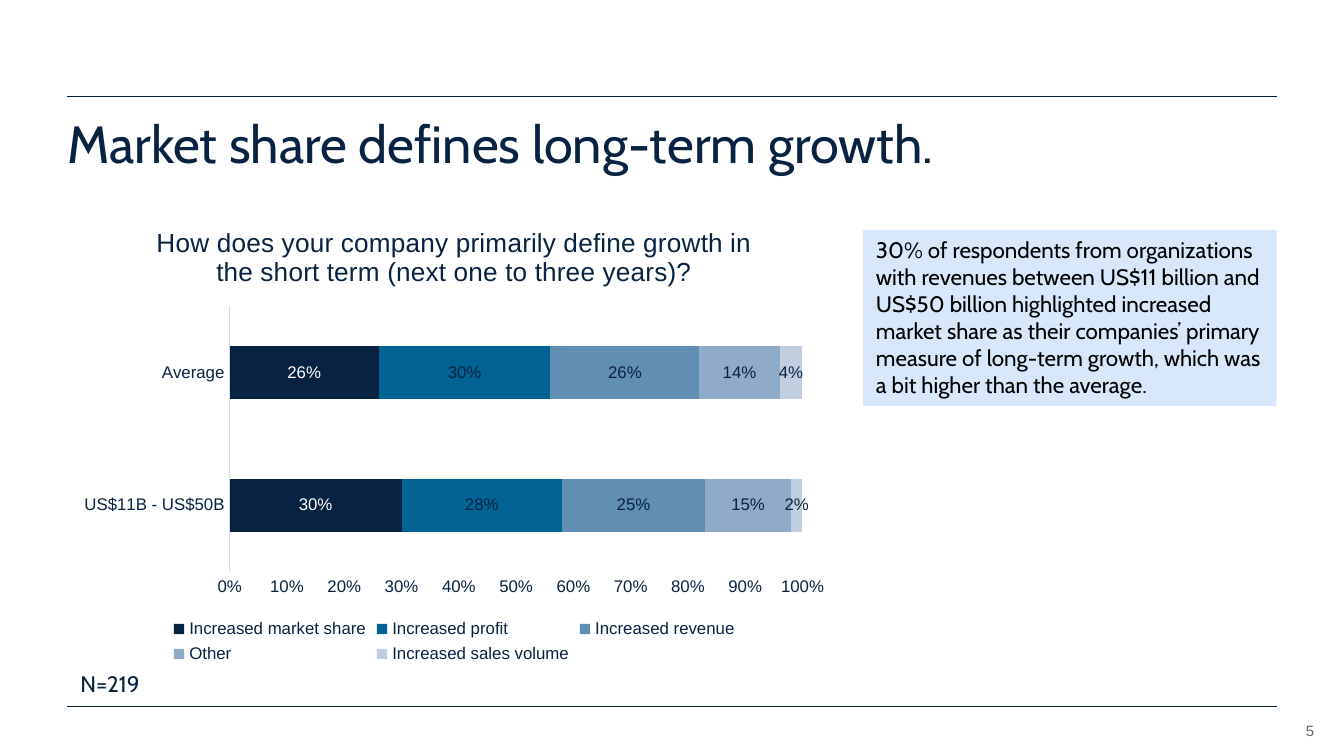
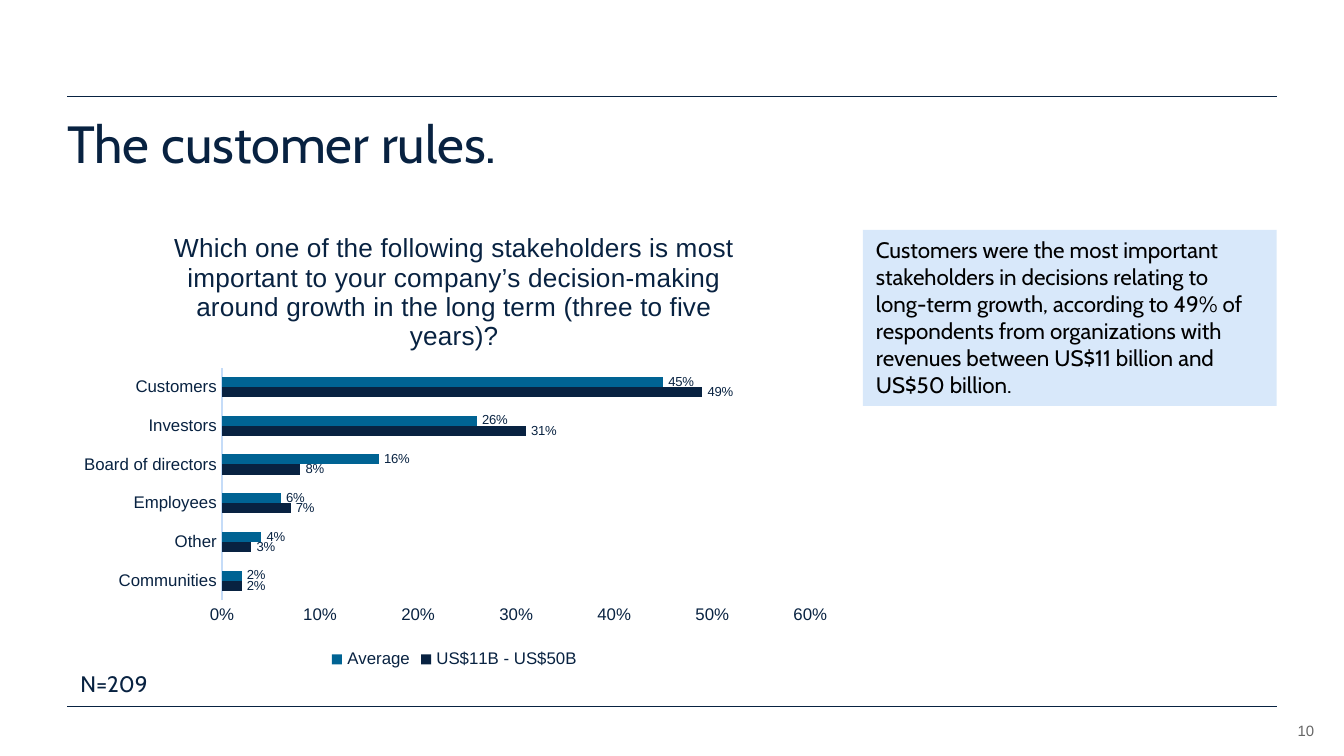
import pptx
import pptx.chart.data
import pptx.dml.color
import pptx.enum.chart
import pptx.enum.shapes
import pptx.enum.text
import pptx.oxml
import pptx.oxml.ns
import pptx.util

Pt = pptx.util.Pt
RGB = pptx.dml.color.RGBColor
ChartType = pptx.enum.chart.XL_CHART_TYPE
LabelPosition = pptx.enum.chart.XL_LABEL_POSITION
TextAlign = pptx.enum.text.PP_ALIGN
Anchor = pptx.enum.text.MSO_ANCHOR

NAVY = RGB(0x08, 0x22, 0x41)
BLUE = RGB(0x00, 0x63, 0x93)
STEEL = RGB(0x61, 0x8E, 0xB3)
MIST = RGB(0x8F, 0xAB, 0xC8)
HAZE = RGB(0xC1, 0xCE, 0xDF)
AXIS_BLUE = RGB(0xC5, 0xDC, 0xF8)
PALE_BLUE = RGB(0xD8, 0xE8, 0xFA)
GRAY = RGB(0x66, 0x66, 0x66)
BLACK = RGB(0, 0, 0)
WHITE = RGB(255, 255, 255)

HEADING_FONT = "Cabin"
CHART_FONT = "Arial"
LEFT, CONTENT_WIDTH = 36, 648
RULE_TOPS = (51.8, 378.7)

SLIDES = [
    {
        "title": "Market share defines long-term growth.",
        "callout": "30% of respondents from organizations with revenues between "
                   "US$11 billion and US$50 billion highlighted increased market "
                   "share as their companies’ primary measure of long-term growth, "
                   "which was a bit higher than the average.",
        "sample": "N=219",
        "number": "5",
        "question": "How does your company primarily define growth in the short "
                    "term (next one to three years)?",
        "type": ChartType.BAR_STACKED_100,
        "top": 109.4,
        "plot": {"x": 0.21, "y": 0.22, "w": 0.74, "h": 0.57},
        "axis_max": 1,
        "gap": 150,
        "overlap": 100,
        "label_size": 9,
        "label_position": LabelPosition.CENTER,
        "categories": ["US$11B - US$50B", "Average"],
        "series": [
            ("Increased market share", (0.30, 0.26), NAVY, WHITE),
            ("Increased profit", (0.28, 0.30), BLUE, NAVY),
            ("Increased revenue", (0.25, 0.26), STEEL, NAVY),
            ("Other", (0.15, 0.14), MIST, NAVY),
            ("Increased sales volume", (0.02, 0.04), HAZE, NAVY),
        ],
    },
    {
        "title": "The customer rules.",
        "callout": "Customers were the most important stakeholders in decisions "
                   "relating to long-term growth, according to 49% of respondents "
                   "from organizations with revenues between US$11 billion and "
                   "US$50 billion.",
        "sample": "N=209",
        "number": "10",
        "question": "Which one of the following stakeholders is most important to "
                    "your company’s decision-making around growth in the long term "
                    "(three to five years)?",
        "type": ChartType.BAR_CLUSTERED,
        "top": 112.3,
        "plot": {"x": 0.2, "y": 0.34, "w": 0.76, "h": 0.5},
        "axis_max": 0.6,
        "gap": 182,
        "overlap": 0,
        "label_size": 7,
        "label_position": LabelPosition.OUTSIDE_END,
        "categories": ["Communities", "Other", "Employees",
                       "Board of directors", "Investors", "Customers"],
        "series": [
            ("US$11B - US$50B", (0.02, 0.03, 0.07, 0.08, 0.31, 0.49), NAVY, NAVY),
            ("Average", (0.02, 0.04, 0.06, 0.16, 0.26, 0.45), BLUE, NAVY),
        ],
    },
]


def style_font(font, size, color=NAVY, name=CHART_FONT):
    font.size = Pt(size)
    font.name = name
    font.color.rgb = color
    font.bold = False


def write(shape, text, size, color=NAVY, name=HEADING_FONT, inset=True,
          align=TextAlign.LEFT, anchor=Anchor.TOP, spacing=None):
    frame = shape.text_frame
    frame.word_wrap = True
    frame.vertical_anchor = anchor
    if inset:
        frame.auto_size = pptx.enum.text.MSO_AUTO_SIZE.SHAPE_TO_FIT_TEXT
    else:
        frame.margin_left = frame.margin_right = 0
        frame.margin_top = frame.margin_bottom = 0
    paragraph = frame.paragraphs[0]
    paragraph.text = text
    paragraph.alignment = align
    paragraph.line_spacing = spacing
    style_font(paragraph.font, size, color, name)


def text_box(slide, box, *args, **style):
    write(slide.shapes.add_textbox(*map(Pt, box)), *args, **style)


def add_rule(slide, top):
    rule = slide.shapes.add_connector(
        pptx.enum.shapes.MSO_CONNECTOR.STRAIGHT,
        Pt(LEFT), Pt(top), Pt(LEFT + CONTENT_WIDTH), Pt(top))
    rule.line.color.rgb = NAVY
    rule.line.width = Pt(0.5)
    rule.element.spPr.append(pptx.oxml.parse_xml(
        f"<a:effectLst {pptx.oxml.ns.nsdecls('a')}/>"))


def add_callout(slide, text):
    callout = slide.shapes.add_shape(
        pptx.enum.shapes.MSO_SHAPE.RECTANGLE,
        Pt(462.2), Pt(123.2), Pt(221.8), Pt(94.3))
    callout.shadow.inherit = False
    callout.fill.solid()
    callout.fill.fore_color.rgb = PALE_BLUE
    callout.line.fill.background()
    write(callout, text, 12, BLACK)


def place_plot(chart, plot):
    area = chart.element.find(".//" + pptx.oxml.ns.qn("c:plotArea"))
    for layout in area.findall(pptx.oxml.ns.qn("c:layout")):
        area.remove(layout)
    sizes = "".join(f'<c:{side} val="{share}"/>' for side, share in plot.items())
    area.insert(0, pptx.oxml.parse_xml(
        f"<c:layout {pptx.oxml.ns.nsdecls('c')}><c:manualLayout>"
        '<c:layoutTarget val="inner"/><c:xMode val="edge"/><c:yMode val="edge"/>'
        f"{sizes}</c:manualLayout></c:layout>"))


def style_axes(chart, axis_max):
    for axis in (chart.category_axis, chart.value_axis):
        axis.has_major_gridlines = False
        axis.major_tick_mark = pptx.enum.chart.XL_TICK_MARK.NONE
        axis.minor_tick_mark = pptx.enum.chart.XL_TICK_MARK.NONE
        style_font(axis.tick_labels.font, 9)
    chart.category_axis.format.line.color.rgb = AXIS_BLUE
    chart.category_axis.format.line.width = Pt(0.75)
    values = chart.value_axis
    values.format.line.fill.background()
    values.minimum_scale = 0
    values.maximum_scale = axis_max
    values.major_unit = 0.1
    values.tick_labels.number_format = "0%"
    values.tick_labels.number_format_is_linked = False


def add_survey_chart(slide, content):
    answers = pptx.chart.data.CategoryChartData(number_format="0%")
    answers.categories = content["categories"]
    for name, shares, *_ in content["series"]:
        answers.add_series(name, shares)
    chart = slide.shapes.add_chart(
        content["type"], Pt(LEFT), Pt(content["top"]), Pt(414.7), Pt(249.1),
        answers).chart
    style_font(chart.font, 10)

    chart.has_title = True
    question = chart.chart_title.text_frame.paragraphs[0]
    question.text = content["question"]
    style_font(question.font, 14)

    chart.has_legend = True
    chart.legend.position = pptx.enum.chart.XL_LEGEND_POSITION.BOTTOM
    chart.legend.include_in_layout = False
    style_font(chart.legend.font, 9)

    style_axes(chart, content["axis_max"])
    place_plot(chart, content["plot"])

    bars = chart.plots[0]
    bars.vary_by_categories = False
    bars.gap_width = content["gap"]
    bars.overlap = content["overlap"]
    for series, (_, _, fill, label_color) in zip(bars.series, content["series"]):
        series.format.fill.solid()
        series.format.fill.fore_color.rgb = fill
        labels = series.data_labels
        labels.show_value = True
        labels.position = content["label_position"]
        labels.number_format = "0%"
        labels.number_format_is_linked = False
        style_font(labels.font, content["label_size"], label_color)


def build_slide(deck, content):
    slide = deck.slides.add_slide(deck.slide_layouts[6])
    for top in RULE_TOPS:
        add_rule(slide, top)
    text_box(slide, (670.3, 383, 33.8, 13), content["number"], 8, GRAY, CHART_FONT,
             inset=False, align=TextAlign.RIGHT, anchor=Anchor.BOTTOM)
    text_box(slide, (LEFT, 63.4, CONTENT_WIDTH, 39.6), content["title"], 28,
             inset=False, spacing=0.9)
    add_callout(slide, content["callout"])
    text_box(slide, (LEFT, 355.7, 120, 21.8), content["sample"], 12)
    add_survey_chart(slide, content)


def main():
    deck = pptx.Presentation()
    deck.slide_width, deck.slide_height = Pt(720), Pt(405)
    for content in SLIDES:
        build_slide(deck, content)
    deck.save("out.pptx")


if __name__ == "__main__":
    main()
